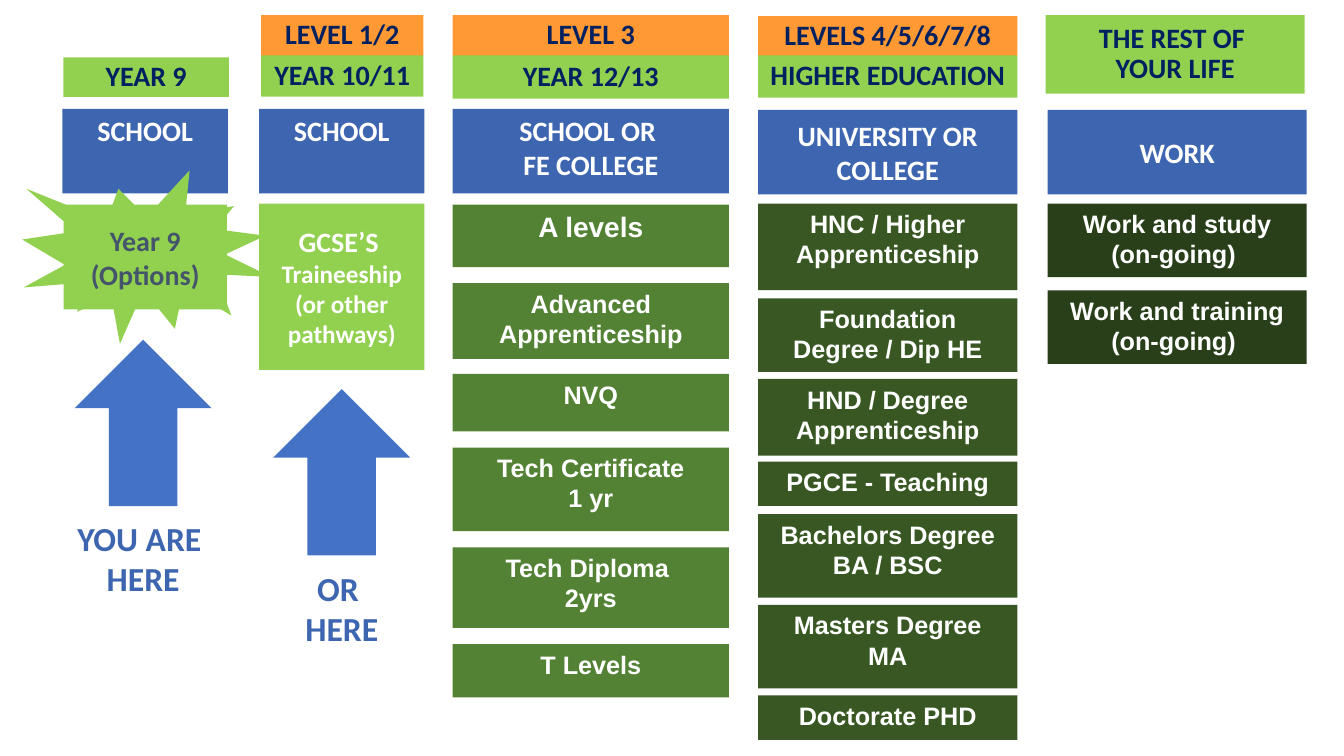
from dataclasses import dataclass

from pptx import Presentation
from pptx import util as u
from pptx.dml.color import RGBColor
from pptx.enum import shapes, text

PX = u.Inches(1) // 100
TOP, MIDDLE = text.MSO_ANCHOR.TOP, text.MSO_ANCHOR.MIDDLE
KIND = shapes.MSO_SHAPE


@dataclass(frozen=True)
class Theme:
    level: str = "FF9933"
    stage: str = "92D050"
    place: str = "3E66B0"
    arrow: str = "4472C4"
    level_three: str = "548235"
    higher: str = "385723"
    work: str = "283F19"
    navy: str = "002060"
    slate: str = "44546A"
    white: str = "FFFFFF"
    heading_font: str = "Calibri"
    option_font: str = "Arial"
    label_size: int = 24
    heading_size: int = 20
    option_size: int = 18


THEME = Theme()


def place_box(box):
    return [u.Emu(length * PX) for length in box]


def write(shape, words, size, color, font=THEME.heading_font, anchor=MIDDLE, spacing=None):
    frame = shape.text_frame
    frame.word_wrap = True
    frame.vertical_anchor = anchor
    frame.text = words
    for paragraph in frame.paragraphs:
        paragraph.alignment = text.PP_ALIGN.CENTER
        paragraph.line_spacing = spacing
        paragraph.font.name = font
        paragraph.font.size = u.Pt(size)
        paragraph.font.bold = True
        paragraph.font.color.rgb = RGBColor.from_string(color)
    return frame


def add_block(slide, box, fill, kind=KIND.RECTANGLE):
    shape = slide.shapes.add_shape(kind, *place_box(box))
    shape.shadow.inherit = False
    shape.fill.solid()
    shape.fill.fore_color.rgb = RGBColor.from_string(fill)
    shape.line.fill.background()
    return shape


def add_header(slide, left, width, bands):
    for top, height, fill, words in bands:
        band = add_block(slide, (left, top, width, height), fill)
        write(band, words, THEME.heading_size, THEME.navy, spacing=0.9)


def add_place(slide, left, top, width, words, anchor=TOP):
    block = add_block(slide, (left, top, width, 84), THEME.place)
    write(block, words, THEME.heading_size, THEME.white, anchor=anchor)


def add_options(slide, left, width, fill, options):
    for top, height, words, size in options:
        block = add_block(slide, (left, top, width, height), fill)
        write(block, words, size, THEME.white, THEME.option_font, TOP)


def add_marker(slide, center, top, words):
    add_block(slide, (center - 68, top, 136, 165), THEME.arrow, KIND.UP_ARROW)
    label = slide.shapes.add_textbox(*place_box((center - 137, top + 172, 274, 91)))
    write(label, words, THEME.label_size, THEME.place, anchor=TOP)


def add_year_nine(slide, left):
    add_header(slide, left + 1, 164, [(57, 39, THEME.stage, "YEAR 9")])
    add_place(slide, left, 108, 164, "SCHOOL")
    add_marker(slide, left + 80, 337, "YOU ARE \nHERE")
    add_block(slide, (left - 40, 169, 247, 172), THEME.stage, KIND.EXPLOSION1)
    choices = add_block(slide, (left + 1, 203, 162, 104), THEME.stage)
    write(choices, "Year 9\n(Options)", THEME.heading_size, THEME.slate)


def add_year_ten(slide, left):
    add_header(slide, left + 2, 161, [
        (15, 41, THEME.level, "LEVEL 1/2"),
        (55, 41, THEME.stage, "YEAR 10/11"),
    ])
    add_place(slide, left, 108, 164, "SCHOOL")
    pathways = add_block(slide, (left, 202, 164, 165), THEME.stage)
    frame = write(pathways, "GCSE’S \nTraineeship\v(or other pathways)",
                  THEME.option_size, THEME.white)
    frame.paragraphs[0].font.size = u.Pt(THEME.heading_size)
    add_marker(slide, left + 82, 386, "OR \nHERE")


def add_level_three(slide, left):
    width, size = 274, THEME.option_size
    add_header(slide, left, width, [
        (15, 41, THEME.level, "LEVEL 3"),
        (55, 43, THEME.stage, "YEAR 12/13"),
    ])
    add_place(slide, left, 108, width, "SCHOOL OR \nFE COLLEGE")
    add_options(slide, left, width, THEME.level_three, [
        (203, 62, "A levels", THEME.heading_size),
        (281, 75, "Advanced Apprenticeship", size),
        (371, 57, "NVQ", size),
        (444, 83, "Tech Certificate\n1 yr", size),
        (543, 80, "Tech Diploma \n2yrs", size),
        (639, 53, "T Levels", size),
    ])


def add_higher_education(slide, left):
    width, size = 257, THEME.option_size
    add_header(slide, left, width, [
        (16, 40, THEME.level, "LEVELS 4/5/6/7/8"),
        (55, 42, THEME.stage, "HIGHER EDUCATION"),
    ])
    add_place(slide, left, 109, width, "UNIVERSITY OR COLLEGE", MIDDLE)
    add_options(slide, left, width, THEME.higher, [
        (202, 86, "HNC / Higher Apprenticeship", size),
        (296, 73, "Foundation Degree / Dip HE", size),
        (376, 76, "HND / Degree Apprenticeship", size),
        (458, 44, "PGCE - Teaching", size),
        (510, 83, "Bachelors Degree\nBA / BSC", size),
        (600, 83, "Masters Degree\nMA", size),
        (690, 44, "Doctorate PHD", size),
    ])


def add_working_life(slide, left):
    width, size = 257, THEME.option_size
    add_header(slide, left - 2, width, [
        (15, 78, THEME.stage, "THE REST OF \nYOUR LIFE"),
    ])
    add_place(slide, left, 109, width, "WORK", MIDDLE)
    add_options(slide, left, width, THEME.work, [
        (202, 73, "Work and study\n(on-going) ", size),
        (288, 73, "Work and training\n(on-going) ", size),
    ])


def main():
    presentation = Presentation()
    presentation.slide_width, presentation.slide_height = place_box((1333, 750))
    slide = presentation.slides.add_slide(presentation.slide_layouts[6])
    add_working_life(slide, 1039)
    add_higher_education(slide, 752)
    add_level_three(slide, 449)
    add_year_ten(slide, 257)
    add_year_nine(slide, 62)
    presentation.save("out.pptx")


if __name__ == "__main__":
    main()
